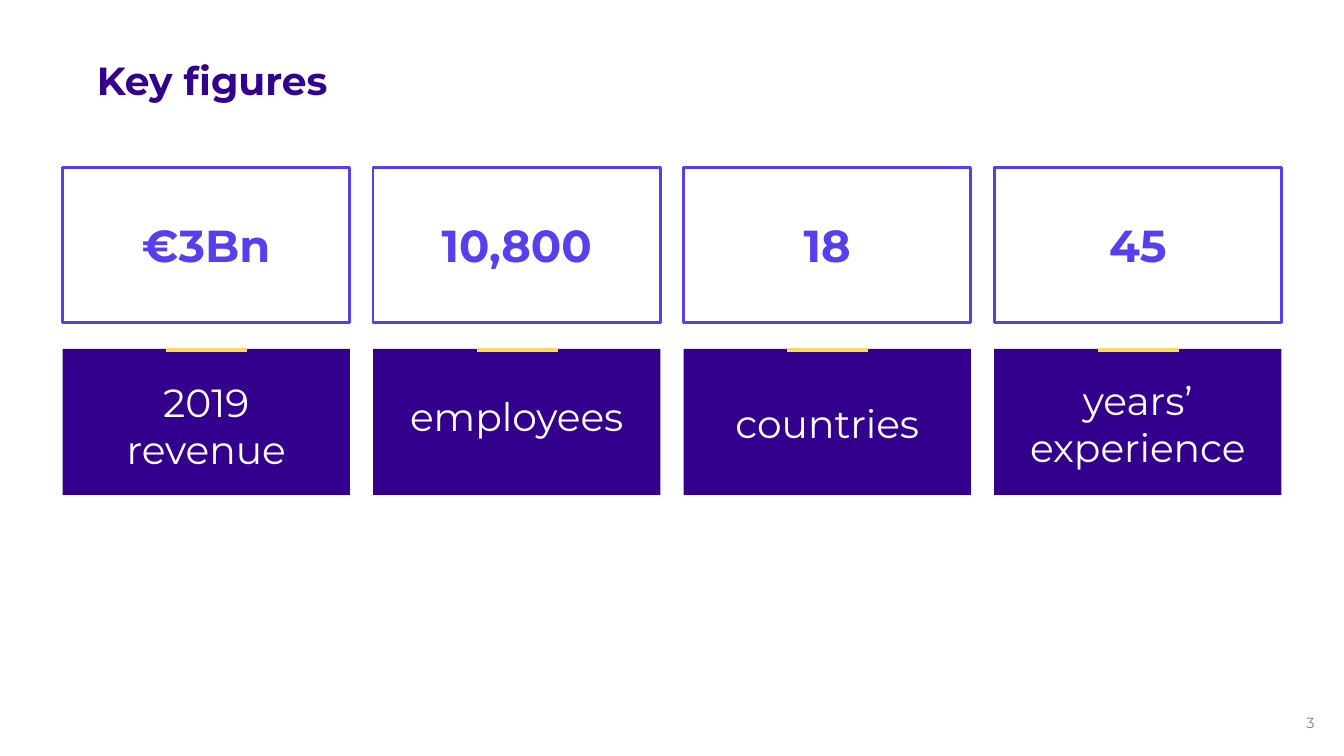
from pptx import Presentation
from pptx.dml.color import RGBColor
from pptx.enum import shapes, text
from pptx.oxml.ns import qn
from pptx.util import Inches, Pt
from lxml import etree

INDIGO = RGBColor(0x33, 0x00, 0x8E)
VIOLET = RGBColor(0x57, 0x3E, 0xEF)
YELLOW = RGBColor(0xF9, 0xD9, 0x57)
GREY = RGBColor(0x80, 0x80, 0x80)
WHITE = RGBColor(0xFF, 0xFF, 0xFF)

FIRST_LEFT, COLUMN_STEP, CARD_WIDTH = 0.62, 3.08, 2.85
FIGURE_TOP, FIGURE_HEIGHT = 1.66, 1.54
CAPTION_TOP, CAPTION_HEIGHT = 3.46, 1.45
ACCENT_Y, ACCENT_OFFSET, ACCENT_WIDTH = 3.47, 1.03, 0.8

# Figure, caption lines, top and height of the caption text
KEY_FIGURES = [
    ("€3Bn", "2019\nrevenue", 3.75, 0.94),
    ("10,800", "employees", 3.89, 0.47),
    ("18", "countries", 3.96, 0.47),
    ("45", "years’ experience", 3.73, 0.94),
]


def write(shape, content, size, color, bold=False, align=text.PP_ALIGN.CENTER,
          anchor=text.MSO_ANCHOR.MIDDLE, margins=(0, 0, 0, 0), wrap=True):
    """Fill a shape with text; margins run left, top, right, bottom in inches."""
    frame = shape.text_frame
    frame.text = content
    left, top, right, bottom = map(Inches, margins)
    frame_format = {
        "word_wrap": wrap, "vertical_anchor": anchor, "margin_left": left,
        "margin_top": top, "margin_right": right, "margin_bottom": bottom,
    }
    for name, value in frame_format.items():
        setattr(frame, name, value)
    for paragraph in frame.paragraphs:
        paragraph.alignment = align
        for run in paragraph.runs:
            font_format = {"name": "Montserrat", "size": Pt(size), "bold": bold}
            for name, value in font_format.items():
                setattr(run.font, name, value)
            run.font.color.rgb = color


def add_card(slide, left, top, height):
    card = slide.shapes.add_shape(
        shapes.MSO_SHAPE.RECTANGLE,
        Inches(left), Inches(top), Inches(CARD_WIDTH), Inches(height))
    card.shadow.inherit = False
    return card


presentation = Presentation()
presentation.slide_width = Inches(13.33)
presentation.slide_height = Inches(7.5)
slide = presentation.slides.add_slide(presentation.slide_layouts[5])

title = slide.shapes.title
title.left, title.top = Inches(0.96), Inches(0.61)
title.width, title.height = Inches(12.37), Inches(0.62)
write(title, "Key figures", 28, INDIGO, bold=True, align=text.PP_ALIGN.LEFT,
      anchor=text.MSO_ANCHOR.TOP, margins=(0, 0, 0.1, 0.05))
title.text_frame.auto_size = text.MSO_AUTO_SIZE.NONE
title.text_frame.paragraphs[0].line_spacing = 0.9

for column, (figure, caption, label_top, label_height) in enumerate(KEY_FIGURES):
    left = FIRST_LEFT + column * COLUMN_STEP

    figure_card = add_card(slide, left, FIGURE_TOP, FIGURE_HEIGHT)
    figure_card.fill.background()
    figure_card.line.color.rgb = VIOLET
    figure_card.line.width = Pt(2)
    write(figure_card, figure, 32, VIOLET, bold=True)

    caption_card = add_card(slide, left, CAPTION_TOP, CAPTION_HEIGHT)
    caption_card.fill.solid()
    caption_card.fill.fore_color.rgb = INDIGO
    caption_card.line.fill.background()

    accent_left = left + ACCENT_OFFSET
    accent = slide.shapes.add_connector(
        shapes.MSO_CONNECTOR.STRAIGHT, Inches(accent_left), Inches(ACCENT_Y),
        Inches(accent_left + ACCENT_WIDTH), Inches(ACCENT_Y))
    accent.line.color.rgb = YELLOW
    accent.line.width = Pt(3)
    etree.SubElement(accent.element.spPr, qn("a:effectLst"))

    label = slide.shapes.add_textbox(
        Inches(left), Inches(label_top), Inches(CARD_WIDTH), Inches(label_height))
    write(label, caption, 28, WHITE)

page_number = slide.shapes.add_textbox(
    Inches(12.72), Inches(7.04), Inches(0.36), Inches(0.26))
write(page_number, "3", 10.5, GREY, align=text.PP_ALIGN.RIGHT,
      margins=(0.04, 0.04, 0.04, 0.04), wrap=False)

presentation.save("out.pptx")
